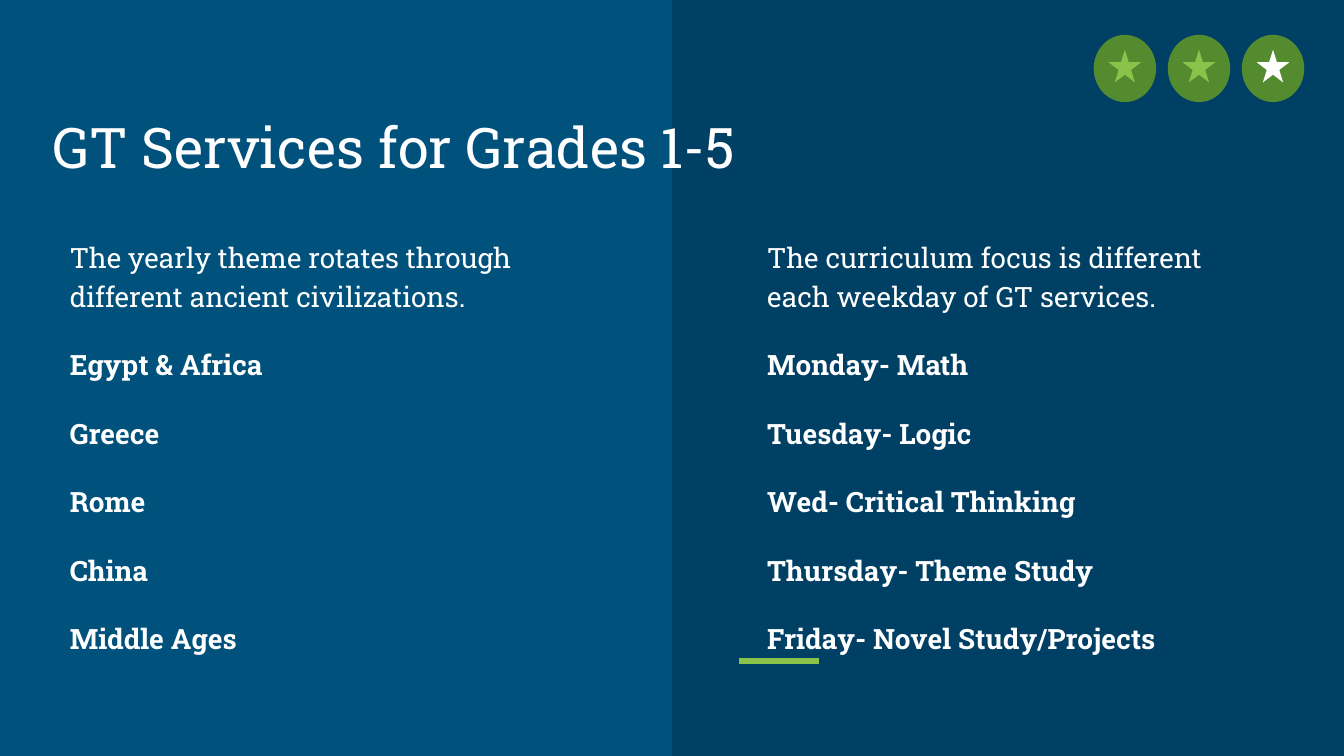
from pptx import Presentation
from pptx.dml.color import RGBColor
from pptx.enum.shapes import MSO_CONNECTOR, MSO_SHAPE
from pptx.enum.text import MSO_ANCHOR
from pptx.oxml.ns import qn
from pptx.util import Cm, Pt
from lxml.etree import SubElement

COLORS = {
    "background": "00517C",
    "panel": "004065",
    "badge": "558B2F",
    "accent": "8BC34A",
    "white": "FFFFFF",
}


def add_filled(shapes, kind, left, top, width, height, color):
    """Add a borderless preset shape; lengths are in centimetres."""
    shape = shapes.add_shape(kind, Cm(left), Cm(top), Cm(width), Cm(height))
    shape.shadow.inherit = False
    shape.fill.solid()
    shape.fill.fore_color.rgb = RGBColor.from_string(COLORS[color])
    shape.line.fill.background()
    return shape


def add_text(left, top, width, height, lines, size):
    """Add a text box from (text, bold) lines and return its paragraphs."""
    box = page.shapes.add_textbox(Cm(left), Cm(top), Cm(width), Cm(height))
    frame = box.text_frame
    frame.word_wrap = True
    frame.vertical_anchor = MSO_ANCHOR.MIDDLE
    frame.margin_left = frame.margin_right = Cm(0.25)
    frame.margin_top = frame.margin_bottom = Cm(0.25)
    for index, (text, bold) in enumerate(lines):
        para = frame.add_paragraph() if index else frame.paragraphs[0]
        span = para.add_run()
        span.text = text
        span.font.name = "Roboto Slab"
        span.font.size = Pt(size)
        span.font.bold = bold
        span.font.color.rgb = RGBColor.from_string(COLORS["white"])
    return frame.paragraphs


deck = Presentation()
deck.slide_width, deck.slide_height = Cm(25.4), Cm(14.29)
page = deck.slides.add_slide(deck.slide_layouts[6])
page.background.fill.solid()
page.background.fill.fore_color.rgb = RGBColor.from_string(COLORS["background"])

# Right half and accent line
add_filled(page.shapes, MSO_SHAPE.RECTANGLE, 12.7, 0, 12.7, 14.29, "panel")
accent = page.shapes.add_connector(
    MSO_CONNECTOR.STRAIGHT, Cm(13.97), Cm(12.49), Cm(15.48), Cm(12.49))
accent.line.color.rgb = RGBColor.from_string(COLORS["accent"])
accent.line.width = Pt(3)
SubElement(accent.element.spPr, qn("a:effectLst"))

add_text(0.74, 0.66, 23.9, 4.19, [("GT Services for Grades 1-5", False)], 30)

# Star badges
for index, star_color in enumerate(["accent", "accent", "white"]):
    left = 20.67 + index * 1.4
    badge = page.shapes.add_group_shape()
    add_filled(badge.shapes, MSO_SHAPE.OVAL, left, 0.66, 1.18, 1.27, "badge")
    add_filled(badge.shapes, MSO_SHAPE.STAR_5_POINT,
               left + 0.28, 0.94, 0.62, 0.62, star_color)

# Text columns: an introduction followed by bold entries
columns = [
    (1.07, "The yearly theme rotates through different ancient civilizations.",
     ["Egypt & Africa", "Greece", "Rome", "China", "Middle Ages"]),
    (14.25, "The curriculum focus is different each weekday of GT services.",
     ["Monday- Math", "Tuesday- Logic", "Wed- Critical Thinking",
      "Thursday- Theme Study", "Friday- Novel Study/Projects"]),
]
for left, introduction, entries in columns:
    lines = [(introduction, False)] + [(entry, True) for entry in entries]
    paras = add_text(left, 4.14, 9.83, 8.56, lines, 15)
    for para in paras:
        para.line_spacing = 1.15
    for para in paras[1:]:
        para.space_before = Pt(16)
    paras[-1].space_after = Pt(16)

deck.save("out.pptx")
